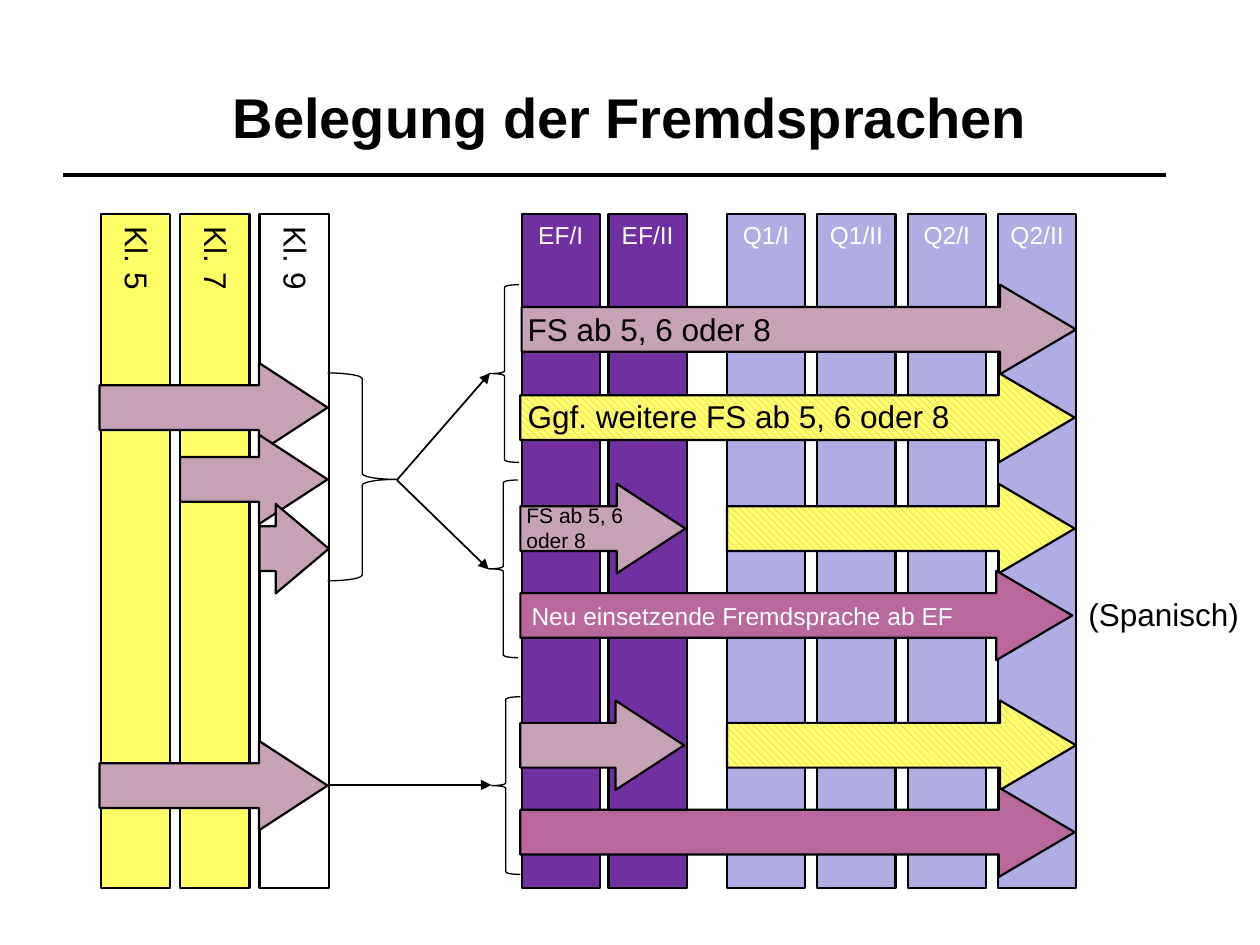
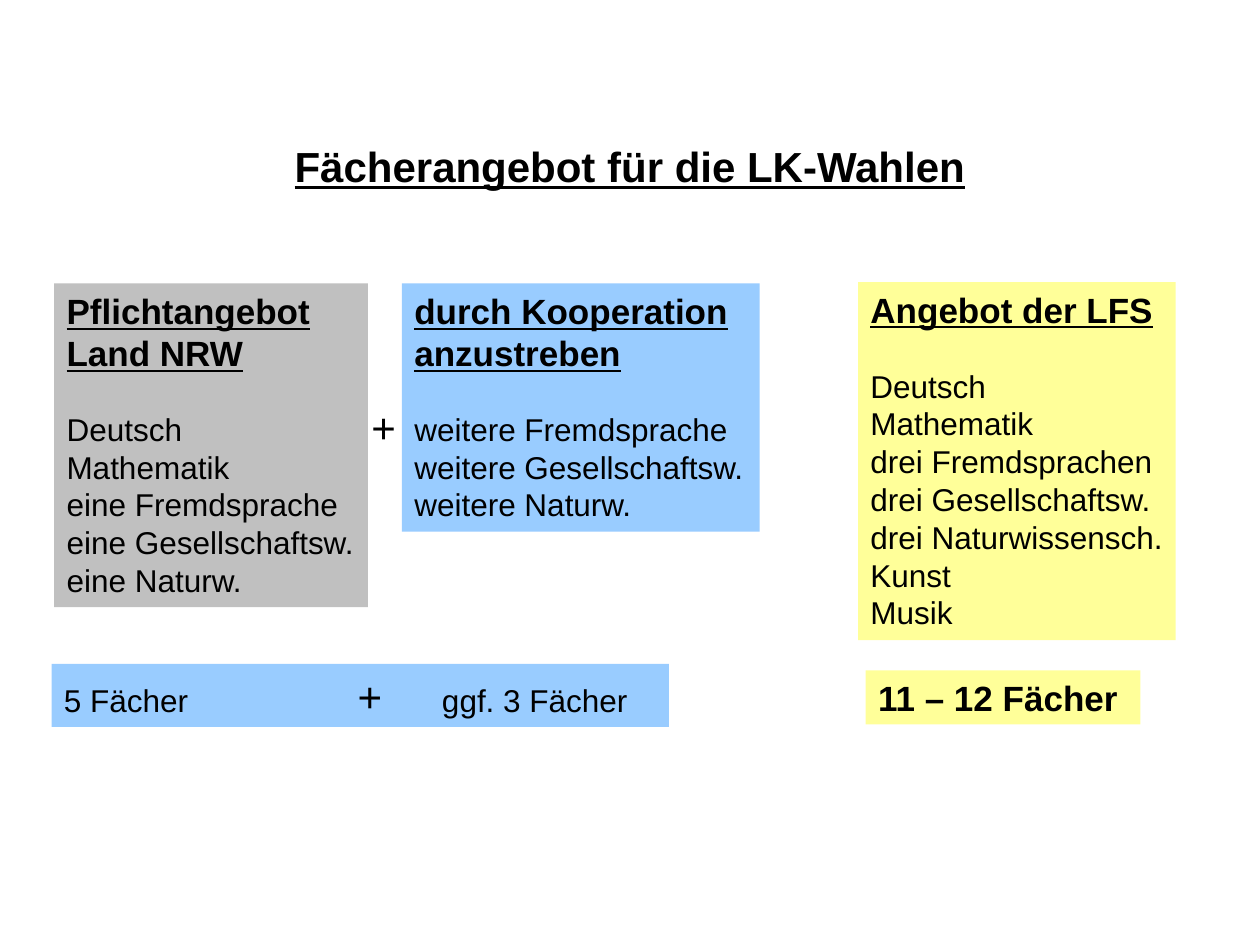
import dataclasses
import typing

import lxml.etree
import pptx
import pptx.dml.color
import pptx.enum.dml
import pptx.enum.shapes
import pptx.enum.text
import pptx.oxml.ns
import pptx.util

Inches = pptx.util.Inches
RGBColor = pptx.dml.color.RGBColor
SHAPE = pptx.enum.shapes.MSO_SHAPE
ALIGN = pptx.enum.text.PP_ALIGN
ANCHOR = pptx.enum.text.MSO_ANCHOR

BLACK = RGBColor(0x00, 0x00, 0x00)
WHITE = RGBColor(0xFF, 0xFF, 0xFF)
YELLOW = RGBColor(0xFF, 0xFF, 0x66)
PURPLE = RGBColor(0x70, 0x30, 0xA0)
LILAC = RGBColor(0xB0, 0xAD, 0xE5)
ROSE = RGBColor(0xC6, 0xA2, 0xB7)
BERRY = RGBColor(0xB8, 0x68, 0x9B)
GREY = RGBColor(0xC0, 0xC0, 0xC0)
BLUE = RGBColor(0x99, 0xCC, 0xFF)
CREAM = RGBColor(0xFF, 0xFF, 0x99)

FONT = "Arial"
BODY = {"size": pptx.util.Pt(18)}
SMALL = {"size": pptx.util.Pt(14)}
TINY = {"size": pptx.util.Pt(12)}
PLUS = {"size": pptx.util.Pt(24)}
TITLE = {"size": pptx.util.Pt(32), "bold": True}
TOPIC = {"size": pptx.util.Pt(24), "bold": True, "underline": True}
HEAD = {"size": pptx.util.Pt(20), "bold": True, "underline": True}
SUM = {"size": pptx.util.Pt(20), "bold": True}

TOP = 1.7
BAR_H = 5.35
ARROW_H = 0.71
BRACE_H = 1.41
SHORT, LONG = 0.767, 0.849


class Bar(typing.NamedTuple):
    label: str
    x: float
    w: float
    fill: RGBColor
    ink: RGBColor
    upright: bool = False


class Arrow(typing.NamedTuple):
    x: float
    y: float
    w: float
    head: float
    fill: RGBColor
    striped: bool = False


class Label(typing.NamedTuple):
    lines: list[str]
    x: float
    y: float
    w: float
    h: float
    style: dict
    ink: RGBColor = BLACK


@dataclasses.dataclass
class Offer:
    x: float
    y: float
    w: float
    h: float
    fill: RGBColor
    heads: list[str]
    items: list[str]


BARS = (
    [Bar(f"Kl. {5 + 2 * i}", 0.8 + 0.63 * i, 0.55, fill, BLACK, True)
     for i, fill in enumerate((YELLOW, YELLOW, WHITE))]
    + [Bar(name, 4.14 + 0.69 * i, 0.62, PURPLE, WHITE)
       for i, name in enumerate(("EF/I", "EF/II"))]
    + [Bar(name, 5.77 + 0.717 * i, 0.62, LILAC, WHITE)
       for i, name in enumerate(("Q1/I", "Q1/II", "Q2/I", "Q2/II"))]
)

ARROWS = [
    Arrow(0.79, 2.88, 1.81, SHORT, ROSE),
    Arrow(1.43, 3.45, 1.17, SHORT, ROSE),
    Arrow(2.06, 4.0, 0.55, SHORT, ROSE),
    Arrow(0.79, 5.88, 1.81, SHORT, ROSE),
    Arrow(4.14, 2.26, 4.4, LONG, ROSE),
    Arrow(4.13, 2.96, 4.4, LONG, YELLOW, True),
    Arrow(5.77, 3.84, 2.76, LONG, YELLOW, True),
    Arrow(4.13, 3.84, 1.31, SHORT, ROSE),
    Arrow(4.13, 4.53, 4.38, LONG, BERRY),
    Arrow(5.77, 5.56, 2.77, LONG, YELLOW, True),
    Arrow(4.13, 5.56, 1.3, SHORT, ROSE),
    Arrow(4.13, 6.25, 4.4, LONG, BERRY),
]

LABELS = [
    Label(["FS ab 5, 6 oder 8"], 4.09, 2.41, 2.2, 0.4, BODY),
    Label(["Ggf. weitere FS ab 5, 6 oder 8"], 4.09, 3.1, 3.64, 0.4, BODY),
    Label(["FS ab 5, 6", "oder 8"], 4.08, 3.94, 2.2, 0.5, TINY),
    Label(["Neu einsetzende Fremdsprache ab EF"], 4.12, 4.72, 3.78, 0.34, SMALL, WHITE),
    Label(["(Spanisch)"], 8.54, 4.67, 1.42, 0.4, BODY),
]

OFFERS = [
    Offer(0.43, 2.25, 2.49, 2.57, GREY, ["Pflichtangebot", "Land NRW"],
          ["Deutsch", "Mathematik", "eine Fremdsprache", "eine Gesellschaftsw.",
           "eine Naturw."]),
    Offer(3.19, 2.25, 2.84, 1.97, BLUE, ["durch Kooperation", "anzustreben"],
          ["weitere Fremdsprache", "weitere Gesellschaftsw.", "weitere Naturw."]),
    Offer(6.81, 2.24, 2.52, 2.84, CREAM, ["Angebot der LFS"],
          ["Deutsch", "Mathematik", "drei Fremdsprachen", "drei Gesellschaftsw.",
           "drei Naturwissensch.", "Kunst", "Musik"]),
]


def add_run(para, text: str, style: dict, ink: RGBColor = BLACK) -> None:
    run = para.add_run()
    run.text = text
    for key, value in {"name": FONT, **style}.items():
        setattr(run.font, key, value)
    run.font.color.rgb = ink


def add_lines(frame, lines: list[str], style: dict, ink: RGBColor = BLACK,
              align=ALIGN.LEFT) -> list:
    """Write one paragraph per line, using the empty first one; return them."""
    paras = []
    for line in lines:
        first = frame.paragraphs[0]
        para = frame.add_paragraph() if first.runs else first
        para.alignment = align
        add_run(para, line, style, ink)
        paras.append(para)
    return paras


def add_text(slide, label: Label, align=ALIGN.LEFT, wrap: bool = False):
    box = slide.shapes.add_textbox(*map(Inches, label[1:5]))
    box.text_frame.word_wrap = wrap
    add_lines(box.text_frame, label.lines, label.style, label.ink, align)
    return box


def add_form(slide, kind, x: float, y: float, w: float, h: float,
             fill: RGBColor | None = None, width: float = 0):
    """Add a flat shape; no fill colour leaves it hollow, no width unlined."""
    form = slide.shapes.add_shape(kind, *map(Inches, (x, y, w, h)))
    form.shadow.inherit = False
    if fill is None:
        form.fill.background()
    else:
        form.fill.solid()
        form.fill.fore_color.rgb = fill
    if width:
        form.line.color.rgb = BLACK
        form.line.width = pptx.util.Pt(width)
    else:
        form.line.fill.background()
    return form


def add_panel(slide, x: float, y: float, w: float, h: float, fill: RGBColor):
    """Add a filled box and return its text frame, set to start at the top."""
    frame = add_form(slide, SHAPE.RECTANGLE, x, y, w, h, fill).text_frame
    frame.word_wrap = False
    frame.vertical_anchor = ANCHOR.TOP
    return frame


def add_line(slide, x1: float, y1: float, x2: float, y2: float,
             width: float, tip: bool = False) -> None:
    line = slide.shapes.add_connector(
        pptx.enum.shapes.MSO_CONNECTOR.STRAIGHT, *map(Inches, (x1, y1, x2, y2)))
    line.line.color.rgb = BLACK
    line.line.width = pptx.util.Pt(width)
    props = line.element.spPr
    if tip:
        lxml.etree.SubElement(props.find(pptx.oxml.ns.qn("a:ln")),
                              pptx.oxml.ns.qn("a:tailEnd"), type="triangle")
    lxml.etree.SubElement(props, pptx.oxml.ns.qn("a:effectLst"))


def add_bar(slide, bar: Bar) -> None:
    add_form(slide, SHAPE.RECTANGLE, bar.x, TOP, bar.w, BAR_H, bar.fill, 1.25)
    if bar.upright:
        box = add_text(slide, Label([bar.label], bar.x - 0.01, TOP, 0.5, 0.76,
                                    BODY, bar.ink), wrap=True)
        box.element.txBody.bodyPr.set("vert", "vert")
    else:
        add_text(slide, Label([bar.label], bar.x, TOP, bar.w, 0.36, SMALL, bar.ink),
                 ALIGN.CENTER)


def add_arrow(slide, arrow: Arrow) -> None:
    form = add_form(slide, SHAPE.RIGHT_ARROW, arrow.x, arrow.y, arrow.w, ARROW_H,
                    arrow.fill, 1.25)
    form.adjustments[0] = 0.5
    form.adjustments[1] = arrow.head
    if arrow.striped:
        form.fill.patterned()
        form.fill.pattern = pptx.enum.dml.MSO_PATTERN.WIDE_DOWNWARD_DIAGONAL
        form.fill.fore_color.rgb = ROSE
        form.fill.back_color.rgb = arrow.fill


def build_plan(slide) -> None:
    title = add_text(slide, Label(["Belegung der Fremdsprachen"], 0.5, 0.3, 9, 1.25, TITLE),
                     ALIGN.CENTER, True)
    title.text_frame.vertical_anchor = ANCHOR.MIDDLE
    add_line(slide, 0.5, 1.39, 9.25, 1.39, 2)
    for bar in BARS:
        add_bar(slide, bar)
    for arrow in ARROWS:
        add_arrow(slide, arrow)
    brace = add_form(slide, SHAPE.RIGHT_BRACE, 2.6, 2.96, 0.55, 1.65, width=0.75)
    brace.adjustments[1] = 0.512
    for x, y in ((3.89, 2.26), (3.88, 3.81), (3.9, 5.53)):
        add_form(slide, SHAPE.LEFT_BRACE, x, y, 0.23, BRACE_H, width=0.75)
    for ends in ((3.15, 3.81, 3.89, 2.96), (3.15, 3.81, 3.88, 4.52), (2.6, 6.23, 3.9, 6.23)):
        add_line(slide, *ends, 1, tip=True)
    for label in LABELS:
        add_text(slide, label)


def add_tabs(para, *stops: float) -> None:
    tabs = lxml.etree.SubElement(para._p.get_or_add_pPr(), pptx.oxml.ns.qn("a:tabLst"))
    for stop in stops:
        lxml.etree.SubElement(tabs, pptx.oxml.ns.qn("a:tab"), pos=str(Inches(stop)), algn="l")


def build_offer(slide) -> None:
    add_text(slide, Label(["Fächerangebot für die LK-Wahlen"], 2.24, 1.07, 5.53, 0.5, TOPIC))
    for offer in OFFERS:
        frame = add_panel(slide, offer.x, offer.y, offer.w, offer.h, offer.fill)
        add_lines(frame, offer.heads, HEAD)
        items = add_lines(frame, offer.items, BODY)
        items[0].space_before = pptx.util.Pt(20.7)
    add_text(slide, Label(["+"], 2.85, 3.14, 0.4, 0.5, PLUS))

    total = add_panel(slide, 0.41, 5.27, 4.9, 0.5, BLUE).paragraphs[0]
    total.alignment = ALIGN.LEFT
    add_tabs(total, 2.33, 3.0)
    for text, style in (("5 Fächer\t", BODY), ("+", PLUS), ("\tggf. 3 Fächer", BODY)):
        add_run(total, text, style)
    add_lines(add_panel(slide, 6.87, 5.32, 2.18, 0.43, CREAM), ["11 – 12 Fächer"], SUM)


def main() -> None:
    deck = pptx.Presentation()
    deck.slide_width, deck.slide_height = Inches(10), Inches(7.5)
    for build in (build_plan, build_offer):
        build(deck.slides.add_slide(deck.slide_layouts[6]))
    deck.save("out.pptx")


if __name__ == "__main__":
    main()
